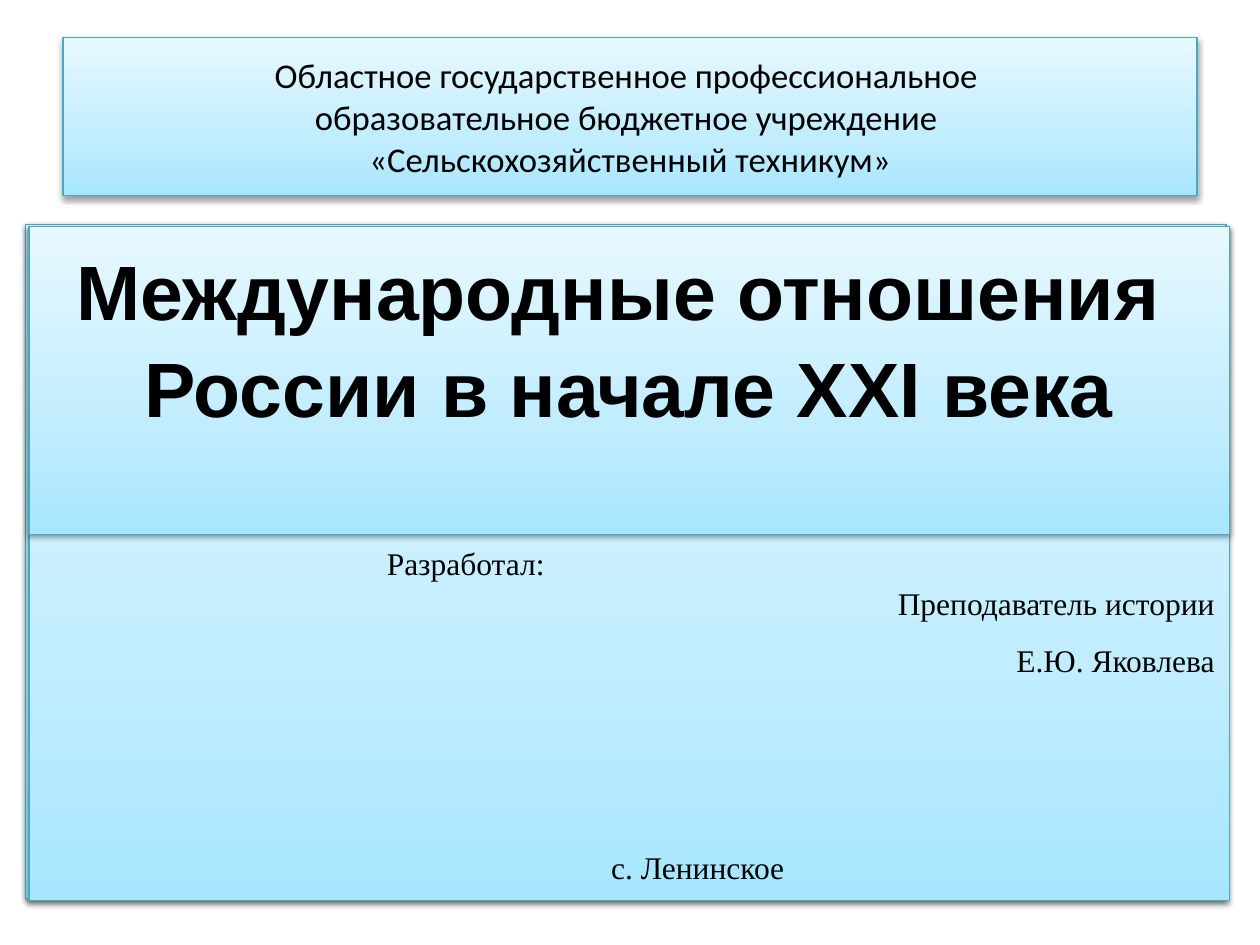
from lxml import etree
from pptx import Presentation
from pptx import util as u
from pptx.dml.color import RGBColor
from pptx.enum import shapes, text
from pptx.oxml import parse_xml
from pptx.oxml.ns import qn

NS = 'xmlns:a="http://schemas.openxmlformats.org/drawingml/2006/main"'
STOPS = [(0, "A7E6FF"), (35, "C1EDFF"), (100, "E7F8FF")]
PLAIN_TABLE = "{2D5ABB26-0587-4C30-8999-92F81FD0307C}"


def rgb(value):
    """Turn a hex string into a colour."""
    return RGBColor.from_string(value)


def place(sp, left, top, width, height):
    """Set the position and size of a shape."""
    sp.left, sp.top = u.Inches(left), u.Inches(top)
    sp.width, sp.height = u.Inches(width), u.Inches(height)


def style_panel(sp):
    """Give a shape the pale blue gradient, thin outline and soft shadow."""
    sp.line.color.rgb = rgb("46AAC5")
    sp.line.width = u.Pt(0.75)
    stops = "".join(f'<a:gs pos="{pos * 1000}"><a:srgbClr val="{color}"/></a:gs>'
                    for pos, color in STOPS)
    sp.line._ln.addprevious(parse_xml(
        f'<a:gradFill {NS} rotWithShape="1"><a:gsLst>{stops}</a:gsLst>'
        '<a:lin ang="16200000" scaled="0"/></a:gradFill>'))
    sp.line._ln.addnext(parse_xml(
        f'<a:effectLst {NS}><a:outerShdw blurRad="{u.Pt(3.1)}" dist="{u.Pt(1.6)}" '
        'dir="5400000" rotWithShape="0"><a:srgbClr val="000000">'
        '<a:alpha val="38000"/></a:srgbClr></a:outerShdw></a:effectLst>'))


def add_panel(slide, left, top, width, height):
    """Add a gradient rectangle."""
    sp = slide.shapes.add_shape(shapes.MSO_SHAPE.RECTANGLE, 0, 0, 0, 0)
    place(sp, left, top, width, height)
    style_panel(sp)
    return sp


def add_run(p, content, font, size, bold=False):
    """Add one black run to a paragraph."""
    r = p.add_run()
    r.text = content
    r.font.name, r.font.size, r.font.bold = font, u.Pt(size), bold
    r.font.color.rgb = rgb("000000")


def fill_centred(tf, lines, font, size, bold=False):
    """Write centred lines, separated by line breaks, in a text frame."""
    tf.word_wrap = True
    tf.auto_size = text.MSO_AUTO_SIZE.NONE
    tf.vertical_anchor = text.MSO_ANCHOR.MIDDLE
    p = tf.paragraphs[0]
    p.alignment = text.PP_ALIGN.CENTER
    for i, line in enumerate(lines):
        if i:
            p.add_line_break()
        add_run(p, line, font, size, bold)
    return p


def add_credits(slide, rows):
    """Add the one-cell table with the author and the place."""
    frame = slide.shapes.add_table(1, 1, u.Inches(0.23), u.Inches(4.3),
                                   u.Inches(9.53), u.Inches(2.89))
    table = frame.table
    table.first_row = table.horz_banding = False
    table._tbl.tblPr.find(qn("a:tableStyleId")).text = PLAIN_TABLE
    cell = table.cell(0, 0)
    cell.fill.background()
    cell.margin_left = cell.margin_right = u.Inches(0.12)
    cell.margin_top = cell.margin_bottom = 0
    tf = cell.text_frame
    for i, (content, align, indent, before, after) in enumerate(rows):
        p = tf.add_paragraph() if i else tf.paragraphs[0]
        p.alignment = align
        p.line_spacing = 1.15
        p.space_before, p.space_after = u.Pt(before), u.Pt(after)
        p._p.get_or_add_pPr().set("marL", str(u.Inches(indent)))
        add_run(p, content, "Times New Roman", 18)


def main():
    """Build the title slide."""
    prs = Presentation()
    prs.slide_width, prs.slide_height = u.Inches(10), u.Inches(7.5)
    slide = prs.slides.add_slide(prs.slide_layouts[5])

    title = slide.shapes.title
    place(title, 0.5, 0.3, 9, 1.25)
    style_panel(title)
    fill_centred(title.text_frame,
                 ["Областное государственное профессиональное ",
                  "образовательное бюджетное учреждение ",
                  "«Сельскохозяйственный техникум»"], "Calibri", 19.8)

    add_panel(slide, 0.2, 1.78, 9.53, 5.35)
    add_panel(slide, 0.23, 1.8, 9.53, 5.35)
    topic = add_panel(slide, 0.23, 1.8, 9.53, 2.44)
    p = fill_centred(topic.text_frame,
                     ["Международные отношения ", "России в начале XXI века"],
                     "Arial", 44, True)
    p.line_spacing = 1.05
    topic.text_frame.margin_bottom = u.Inches(0.75)

    left, right = text.PP_ALIGN.LEFT, text.PP_ALIGN.RIGHT
    add_credits(slide, [("Разработал:", left, 2.72, 0, 0),
                        ("Преподаватель истории", right, 0, 0, 10),
                        ("Е.Ю. Яковлева", right, 0, 0, 10),
                        ("с. Ленинское", left, 4.5, 85, 0)])
    prs.save("out.pptx")


if __name__ == "__main__":
    main()
